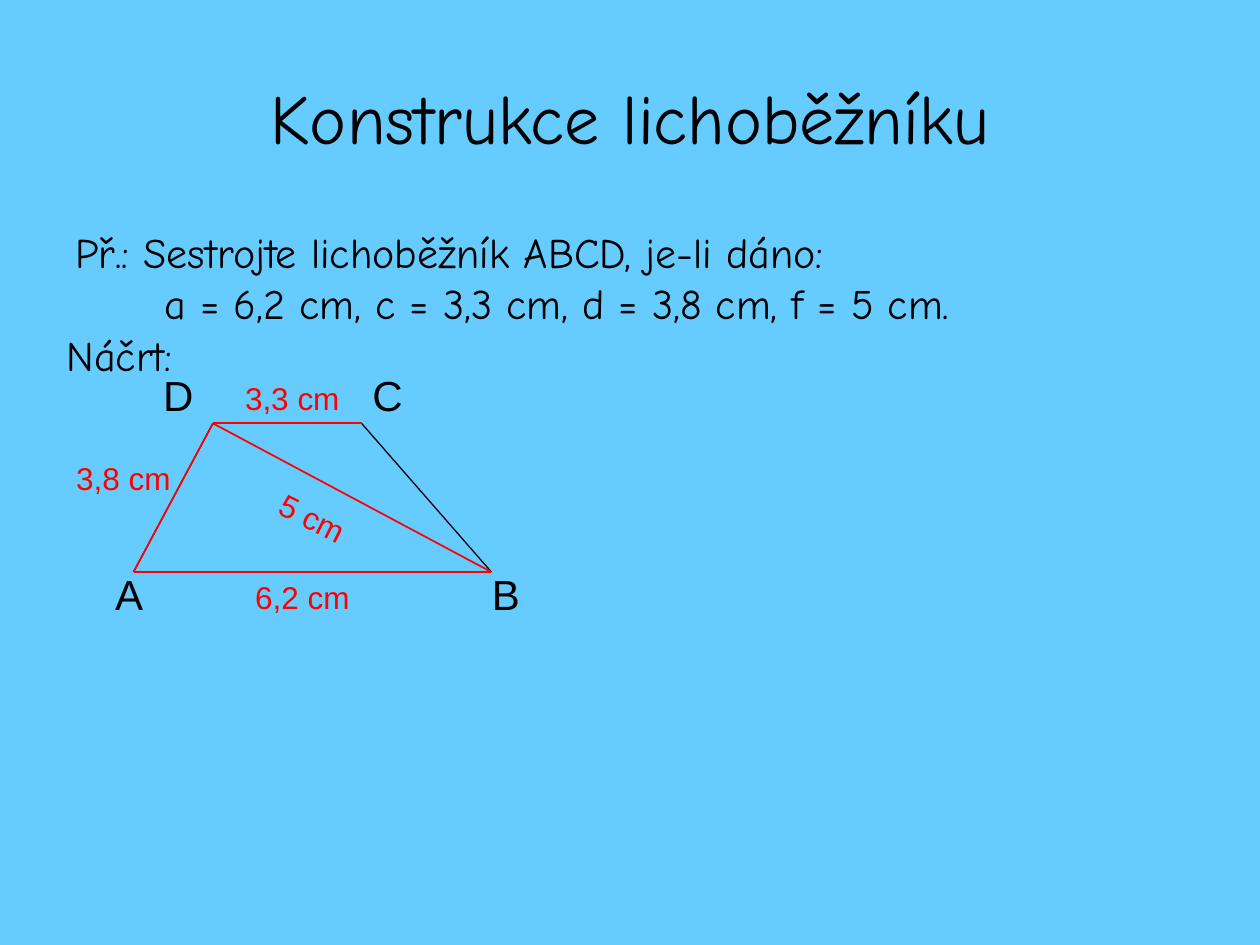
from dataclasses import dataclass

from lxml.etree import SubElement as Sub
from pptx import Presentation as Deck
from pptx.dml.color import RGBColor as RGB
from pptx.enum.shapes import MSO_CONNECTOR as Link
from pptx.enum.text import MSO_ANCHOR as Anchor
from pptx.enum.text import MSO_AUTO_SIZE as Fit
from pptx.enum.text import PP_ALIGN as Align
from pptx.oxml.ns import qn
from pptx.util import Inches, Pt


@dataclass(frozen=True)
class Theme:
    back: RGB = RGB(0x66, 0xCC, 0xFF)
    ink: RGB = RGB(0, 0, 0)
    mark: RGB = RGB(0xFF, 0, 0)
    hand: str = "Comic Neue"
    plain: str = "Arial"
    head: int = 40
    body: int = 24
    note: int = 18
    thin: float = 0.75
    bold: float = 1


def write(frame, text, font, size, color, align=Align.LEFT, hang=0):
    frame.word_wrap = True
    para = frame.paragraphs[0]
    para.text = text
    para.alignment = align
    if hang:
        props = para._p.get_or_add_pPr()
        props.set("marL", str(Inches(hang)))
        props.set("indent", str(-Inches(hang)))
    for run in para.runs:
        run.font.name = font
        run.font.size = Pt(size)
        run.font.color.rgb = color


class Board:
    def __init__(self, deck, theme):
        self.theme = theme
        self.slide = deck.slides.add_slide(deck.slide_layouts[5])
        fill = self.slide.background.fill
        fill.solid()
        fill.fore_color.rgb = theme.back

    def title(self, text, x, y, w, h):
        shape = self.slide.shapes.title
        shape.left, shape.top = Inches(x), Inches(y)
        shape.width, shape.height = Inches(w), Inches(h)
        frame = shape.text_frame
        frame.auto_size = Fit.NONE
        frame.vertical_anchor = Anchor.MIDDLE
        t = self.theme
        write(frame, text, t.hand, t.head, t.ink, align=Align.CENTER)

    def box(self, text, x, y, w, h, turn=0, **style):
        shape = self.slide.shapes.add_textbox(
            Inches(x), Inches(y), Inches(w), Inches(h))
        shape.rotation = turn
        write(shape.text_frame, text, **style)

    def prose(self, text, x, y, w, h, hang=0):
        t = self.theme
        self.box(text, x, y, w, h, font=t.hand, size=t.body,
                 color=t.ink, hang=hang)

    def point(self, name, x, y):
        t = self.theme
        self.box(name, x, y, 0.71, 0.5, font=t.plain, size=t.body,
                 color=t.ink, align=Align.CENTER)

    def measure(self, text, x, y, turn=0):
        t = self.theme
        self.box(text, x, y, 1.26, 0.4, turn, font=t.plain, size=t.note,
                 color=t.mark, align=Align.CENTER)

    def line(self, start, end, color, width):
        ends = [Inches(v) for v in (*start, *end)]
        link = self.slide.shapes.add_connector(Link.STRAIGHT, *ends)
        link.line.color.rgb = color
        link.line.width = Pt(width)
        Sub(link._element.spPr, qn("a:effectLst"))


def main():
    deck = Deck()
    deck.slide_width, deck.slide_height = Inches(10), Inches(7.5)
    theme = Theme()
    board = Board(deck, theme)

    board.title("Konstrukce lichoběžníku", 0.5, 0.3, 9, 1.25)
    board.prose("Př.: Sestrojte lichoběžník ABCD, je-li dáno:\v"
                "a = 6,2 cm, c = 3,3 cm, d = 3,8 cm, f = 5 cm.",
                0.5, 1.75, 9, 4.95, hang=0.71)
    board.prose("Náčrt:", 0.43, 2.57, 2.6, 0.5)

    top, base = 3.36, 4.54
    spots = {"A": (1.06, base), "B": (3.9, base),
             "C": (2.87, top), "D": (1.69, top)}
    for pair in ("AB", "BC", "CD", "DA"):
        board.line(*(spots[k] for k in pair), theme.ink, theme.thin)
    for pair in ("AB", "DC", "DB", "DA"):
        board.line(*(spots[k] for k in pair), theme.mark, theme.bold)

    names = {"A": (0.67, 4.46), "B": (3.66, 4.46),
             "C": (2.72, 2.88), "D": (1.06, 2.88)}
    for name, spot in names.items():
        board.point(name, *spot)

    board.measure("3,3 cm", 1.69, 2.96)
    board.measure("6,2 cm", 1.77, 4.54)
    board.measure("3,8 cm", 0.35, 3.59)
    board.measure("5 cm", 1.85, 3.91, turn=26.6)

    deck.save("out.pptx")


if __name__ == "__main__":
    main()
